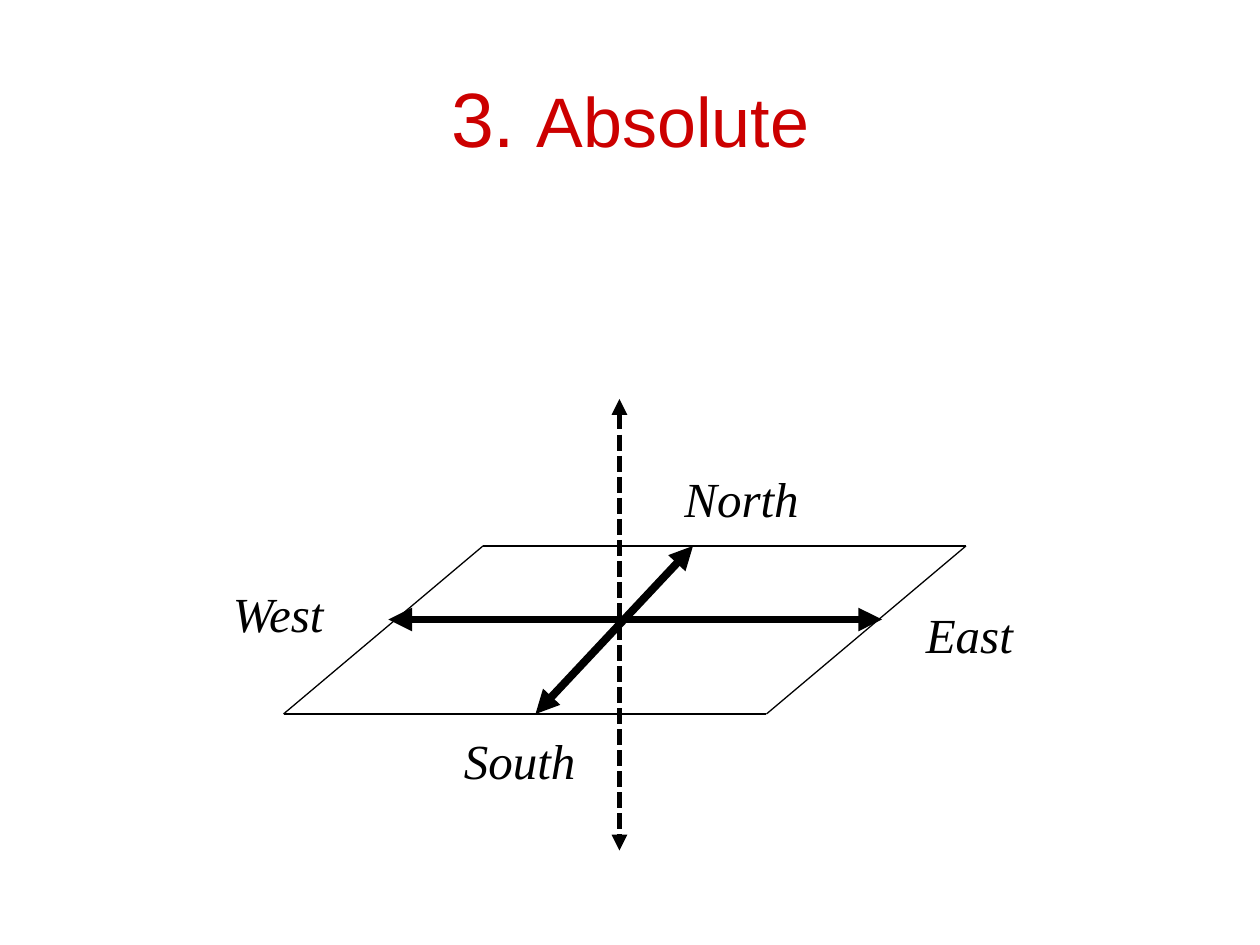
from typing import NamedTuple, Optional

from lxml.etree import SubElement
from pptx import Presentation
from pptx.dml.color import RGBColor
from pptx.enum.dml import MSO_LINE
from pptx.enum.shapes import MSO_CONNECTOR
from pptx.enum.text import MSO_ANCHOR, MSO_AUTO_SIZE, PP_ALIGN
from pptx.oxml.ns import qn
from pptx.util import Pt

RED = RGBColor(0xCC, 0x00, 0x00)
BLACK = RGBColor(0x00, 0x00, 0x00)


class Point(NamedTuple):
    x: float
    y: float


class Axis(NamedTuple):
    start: Point
    end: Point
    width: float
    dash: Optional[MSO_LINE] = None


class Label(NamedTuple):
    text: str
    left: float
    top: float
    width: float


LABEL_HEIGHT = 41
LABEL_FONT = {"name": "Times New Roman", "size": Pt(28), "italic": True}

# Corners of the ground plane, clockwise from the back left
PLANE = [Point(276, 312), Point(552, 312), Point(438, 408), Point(162, 408)]

WEST_EAST = Axis(Point(504, 354), Point(222, 354), 4.5)
NORTH_SOUTH = Axis(Point(396, 312), Point(306, 408), 4.5)
UP_DOWN = Axis(Point(354, 228), Point(354, 486), 3, MSO_LINE.SQUARE_DOT)

LABELS = [
    Label("East", 522, 342, 90),
    Label("North", 384, 264, 106.5),
    Label("West", 126, 330, 90),
    Label("South", 258, 414, 84),
]


def add_run(p, text: str, color: RGBColor, font: dict) -> None:
    r = p.add_run()
    r.text = text
    r.font.color.rgb = color
    for name, value in font.items():
        setattr(r.font, name, value)


def draw_line(shapes, start: Point, end: Point, width: float):
    line = shapes.add_connector(
        MSO_CONNECTOR.STRAIGHT, Pt(start.x), Pt(start.y), Pt(end.x), Pt(end.y))
    line.line.color.rgb = BLACK
    line.line.width = Pt(width)
    SubElement(line._element.spPr, qn("a:effectLst"))
    return line


def draw_axis(shapes, axis: Axis) -> None:
    line = draw_line(shapes, axis.start, axis.end, axis.width)
    if axis.dash is not None:
        line.line.dash_style = axis.dash
    ln = line.line._get_or_add_ln()
    for tag in ("a:headEnd", "a:tailEnd"):
        SubElement(ln, qn(tag), type="triangle")


def draw_label(shapes, label: Label) -> None:
    box = shapes.add_textbox(
        Pt(label.left), Pt(label.top), Pt(label.width), Pt(LABEL_HEIGHT))
    tf = box.text_frame
    tf.word_wrap = True
    tf.auto_size = MSO_AUTO_SIZE.SHAPE_TO_FIT_TEXT
    p = tf.paragraphs[0]
    p.space_before = Pt(3.5)
    add_run(p, label.text, BLACK, LABEL_FONT)


def draw_title(title) -> None:
    frame = {"left": Pt(36), "top": Pt(21.6), "width": Pt(648), "height": Pt(90)}
    for name, value in frame.items():
        setattr(title, name, value)
    tf = title.text_frame
    tf.vertical_anchor = MSO_ANCHOR.MIDDLE
    p = tf.paragraphs[0]
    p.alignment = PP_ALIGN.CENTER
    for text, size in (("3. ", 44), ("Absolute", 40)):
        add_run(p, text, RED, {"name": "Arial", "size": Pt(size)})


def main() -> None:
    prs = Presentation()
    prs.slide_width, prs.slide_height = Pt(720), Pt(540)
    s = prs.slides.add_slide(prs.slide_layouts[5])
    draw_title(s.shapes.title)

    # Compass axes
    for axis in (WEST_EAST, NORTH_SOUTH):
        draw_axis(s.shapes, axis)

    # Ground plane
    plane = s.shapes.add_group_shape()
    for start, end in zip(PLANE, PLANE[1:] + PLANE[:1]):
        draw_line(plane.shapes, start, end, 0.75)

    # Vertical axis and direction names
    draw_axis(s.shapes, UP_DOWN)
    for label in LABELS:
        draw_label(s.shapes, label)

    prs.save("out.pptx")


if __name__ == "__main__":
    main()
